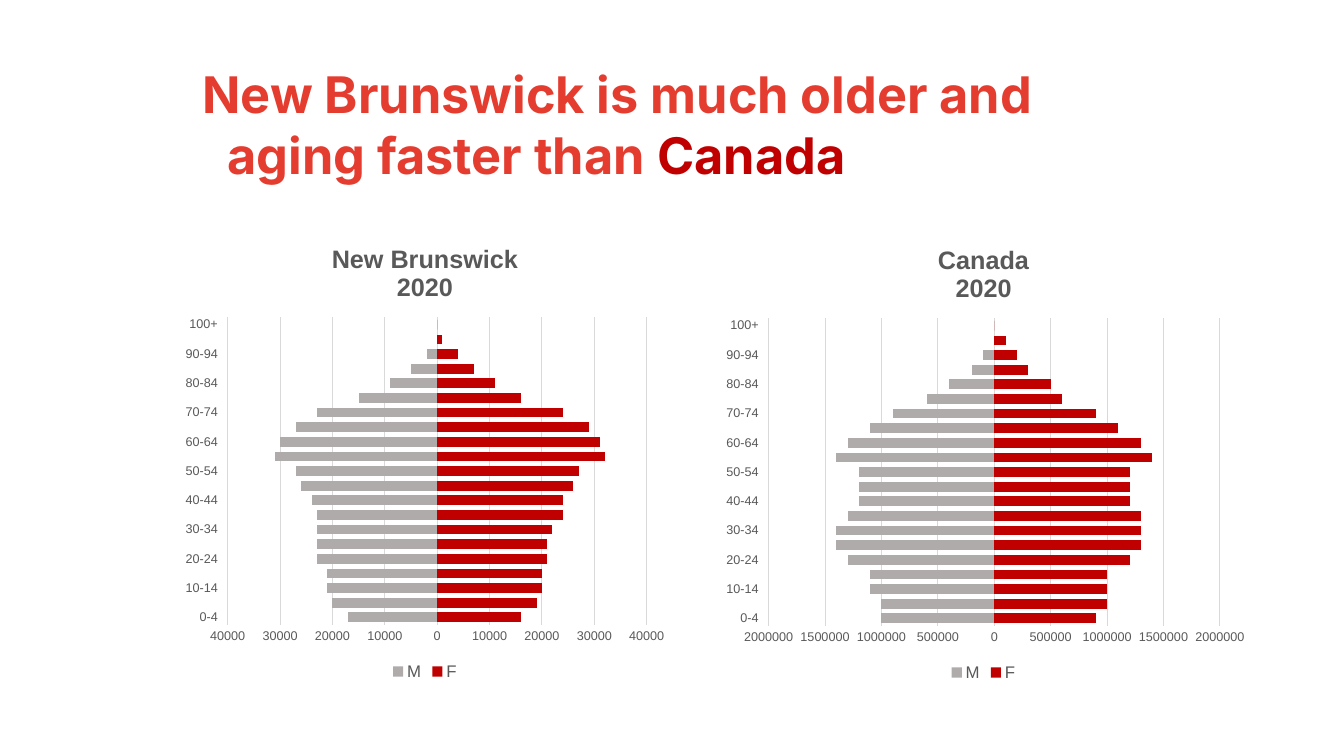
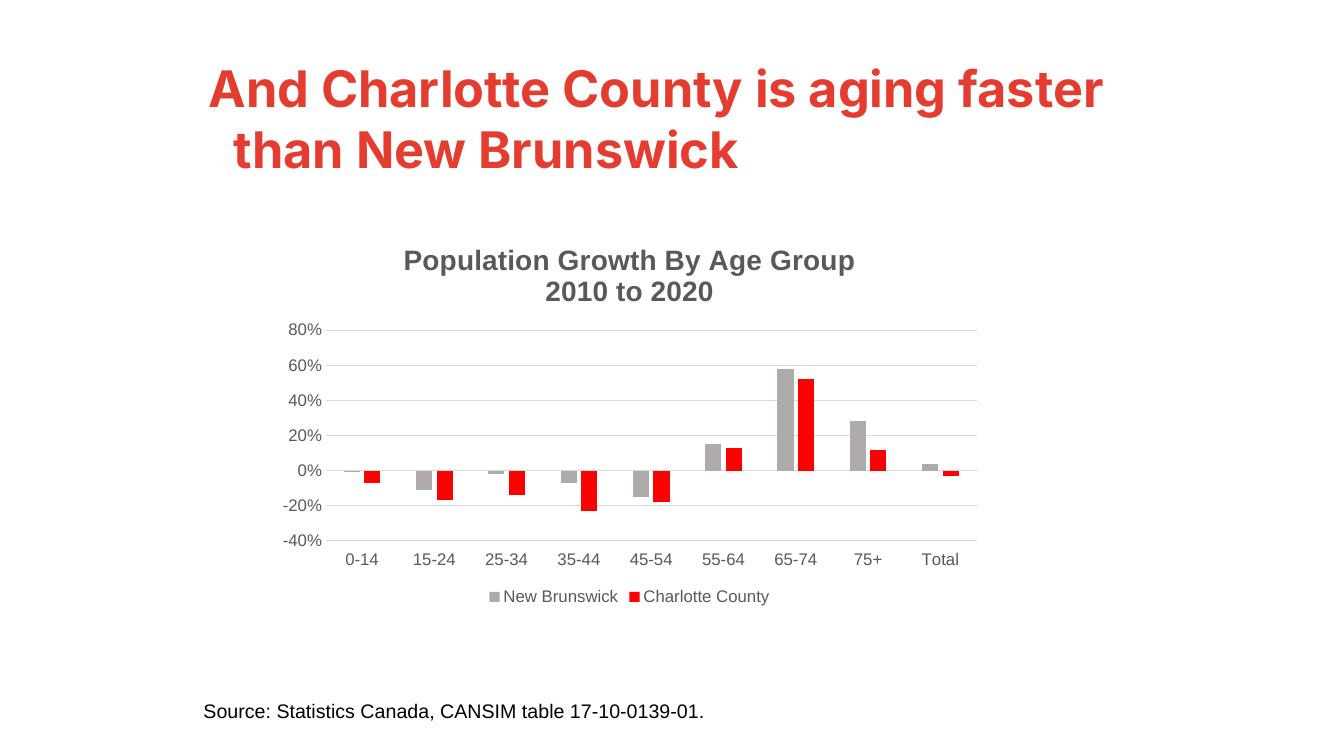
from pptx import Presentation
from pptx.chart.data import CategoryChartData
from pptx.dml.color import RGBColor
from pptx.enum.chart import XL_CHART_TYPE, XL_LEGEND_POSITION, XL_TICK_LABEL_POSITION, XL_TICK_MARK
from pptx.oxml import parse_xml
from pptx.oxml.ns import nsdecls
from pptx.util import Inches, Pt

RED, DARK, GREY, TEXT, RULE = "E43D30", "C00000", "AFABAB", "595959", "D9D9D9"

deck = Presentation()
deck.slide_width, deck.slide_height = Inches(13.33), Inches(7.5)


def paint(part, code):
    part.rgb = RGBColor.from_string(code)


def place(x, y, wide, high):
    return [round(share * size / 100) for share, size in zip(
        (x, y, wide, high), (deck.slide_width, deck.slide_height) * 2)]


slides = [deck.slides.add_slide(deck.slide_layouts[6]) for _ in range(2)]

titles = [
    ((12.45, 7.73, 72.84, 17.33),
     [("New Brunswick is much older and aging faster than ", RED), ("Canada", DARK)]),
    ((12.9, 6.93, 72.84, 20.67),
     [("And Charlotte County is aging faster than New Brunswick", RED)]),
]
for slide, (area, runs) in zip(slides, titles):
    frame = slide.shapes.add_textbox(*place(*area)).text_frame
    frame.word_wrap = True
    para = frame.paragraphs[0]
    props = para._p.get_or_add_pPr()
    props.set("marL", str(Inches(0.5)))
    props.set("indent", str(Inches(-0.25)))
    para.font.name, para.font.size, para.font.bold = "Inter", Pt(36), True
    for words, code in runs:
        run = para.add_run()
        run.text = words
        paint(run.font.color, code)

frame = slides[1].shapes.add_textbox(*place(14.4, 91.73, 70.22, 4.53)).text_frame
frame.word_wrap = True
para = frame.paragraphs[0]
para.text = "Source: Statistics Canada, CANSIM table 17-10-0139-01."
para.font.name, para.font.size = "Arial", Pt(14)
paint(para.font.color, "000000")

ages = [f"{low}-{low + 4}" for low in range(0, 100, 5)] + ["100+"]
groups = ["0-14"] + [f"{low}-{low + 9}" for low in range(15, 75, 10)] + ["75+", "Total"]
stack = dict(kind=XL_CHART_TYPE.BAR_STACKED, cats=ages, form="0;0", size=9, head=18, gap=50, lap=100)
group = dict(kind=XL_CHART_TYPE.COLUMN_CLUSTERED, cats=groups, form="0%", size=12, head=20, gap=219, lap=-27)

charts = [
    dict(stack, slide=slides[0], area=(13.28, 29.87, 36.68, 60.67), plot=(0.1, 0.2, 0.85, 0.67),
         title="New Brunswick\n2020", scale=(-40000, 40000, 10000), rows=[
        ("M", GREY, 1000, [-17, -20, -21, -21, -23, -23, -23, -23, -24, -26, -27,
                           -31, -30, -27, -23, -15, -9, -5, -2, 0, 0]),
        ("F", DARK, 1000, [16, 19, 20, 20, 21, 21, 22, 24, 24, 26, 27,
                           32, 31, 29, 24, 16, 11, 7, 4, 1, 0])]),
    dict(stack, slide=slides[0], area=(53.19, 30, 39.98, 60.67), plot=(0.1, 0.2, 0.84, 0.67),
         title="Canada\n2020", scale=(-2000000, 2000000, 500000), rows=[
        ("M", GREY, 100000, [-10, -10, -11, -11, -13, -14, -14, -13, -12, -12, -12,
                             -14, -13, -11, -9, -6, -4, -2, -1, 0, 0]),
        ("F", DARK, 100000, [9, 10, 10, 10, 12, 13, 13, 13, 12, 12, 12,
                             14, 13, 11, 9, 6, 5, 3, 2, 1, 0])]),
    dict(group, slide=slides[1], area=(19.95, 30, 53.79, 50.67), plot=(0.08, 0.27, 0.9, 0.55),
         title="Population Growth By Age Group\n2010 to 2020", scale=(-0.4, 0.8, 0.2), rows=[
        ("New Brunswick", GREY, 1, [-0.01, -0.11, -0.02, -0.07, -0.15, 0.15, 0.58, 0.28, 0.04]),
        ("Charlotte County", "FF0000", 1, [-0.07, -0.17, -0.14, -0.23, -0.18, 0.13, 0.52, 0.12, -0.03])]),
]

for item in charts:
    data = CategoryChartData(number_format=item["form"])
    data.categories = item["cats"]
    for name, code, unit, vals in item["rows"]:
        data.add_series(name, [val * unit for val in vals])
    chart = item["slide"].shapes.add_chart(item["kind"], *place(*item["area"]), data).chart
    chart.font.name, chart.font.size = "Arial", Pt(10)

    chart.has_title = True
    chart.chart_title.include_in_layout = False
    frame = chart.chart_title.text_frame
    frame.text = item["title"]
    for para in frame.paragraphs:
        para.font.name, para.font.size, para.font.bold = "Arial", Pt(item["head"]), True
        paint(para.font.color, TEXT)

    chart.has_legend = True
    chart.legend.position = XL_LEGEND_POSITION.BOTTOM
    chart.legend.include_in_layout = False

    cat, val = chart.category_axis, chart.value_axis
    for part, size in ((chart.legend, 12), (cat.tick_labels, item["size"]), (val.tick_labels, item["size"])):
        part.font.name, part.font.size = "Arial", Pt(size)
        paint(part.font.color, TEXT)
    for axis in (cat, val):
        axis.major_tick_mark = axis.minor_tick_mark = XL_TICK_MARK.NONE
    cat.tick_label_position = XL_TICK_LABEL_POSITION.LOW
    val.minimum_scale, val.maximum_scale, val.major_unit = item["scale"]
    val.tick_labels.number_format = item["form"]
    val.tick_labels.number_format_is_linked = False
    val.format.line.fill.background()
    for line in (cat.format.line, val.major_gridlines.format.line):
        line.width = Pt(0.75)
        paint(line.color, RULE)

    plot = chart.plots[0]
    plot.gap_width, plot.overlap, plot.vary_by_categories = item["gap"], item["lap"], False
    for row, (name, code, unit, vals) in zip(plot.series, item["rows"]):
        row.invert_if_negative = False
        row.format.fill.solid()
        paint(row.format.fill.fore_color, code)

    field = chart._chartSpace.chart.plotArea
    for old in field.xpath("c:layout"):
        field.remove(old)
    sides = "".join(f'<c:{key} val="{share}"/>' for key, share in zip("xywh", item["plot"]))
    field.insert(0, parse_xml(
        f'<c:layout {nsdecls("c")}><c:manualLayout><c:layoutTarget val="inner"/>'
        f'<c:xMode val="edge"/><c:yMode val="edge"/>{sides}</c:manualLayout></c:layout>'))

deck.save("out.pptx")
